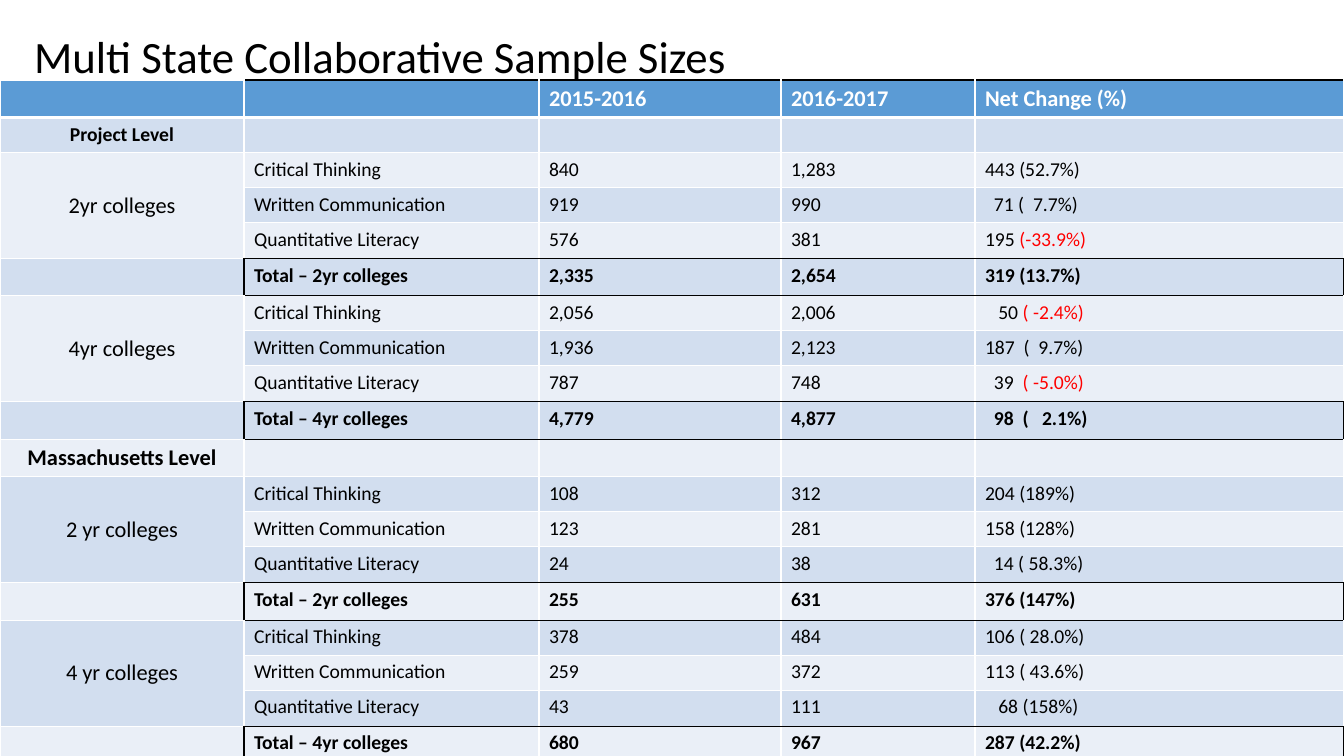
from typing import NamedTuple

from lxml.etree import SubElement
from pptx import Presentation
from pptx.dml.color import RGBColor
from pptx.enum.text import MSO_ANCHOR, PP_ALIGN
from pptx.oxml.ns import qn
from pptx.util import Emu, Pt

FONT = "Calibri"
WHITE, BLACK, RED = "FFFFFF", "000000", "FF0000"
HEAD, BANDS = "5B9BD5", ("EAEFF7", "D2DEEF")
COLS = (244, 295, 242, 194, 369)
LOW, TALL = 35, 37


class Row(NamedTuple):
    group: str = ""
    label: str = ""
    first: str = ""
    second: str = ""
    change: str = ""
    high: int = LOW
    size: int = 14  # text size of the group column
    bold: bool = False
    span: int = 1

    @property
    def total(self) -> bool:
        return self.label.startswith("Total")


def block(group: str, name: str, *scores: tuple[str, str, str]) -> list[Row]:
    """Three outcomes under one group name, then their total."""
    crit, writ, quant, total = scores
    return [
        Row(group, "Critical Thinking", *crit, size=16, span=3),
        Row("", "Written Communication", *writ),
        Row("", "Quantitative Literacy", *quant, high=LOW + 1),
        Row("", f"Total – {name}", *total, high=TALL, size=16, bold=True),
    ]


ROWS = [
    Row("", "", "2015-2016", "2016-2017", "Net Change (%)", TALL, 16, True),
    Row("Project Level", bold=True),
    *block("2yr colleges", "2yr colleges",
           ("840", "1,283", "443 (52.7%)"),
           ("919", "990", "  71 (  7.7%)"),
           ("576", "381", "195 (-33.9%)"),
           ("2,335", "2,654", "319 (13.7%)")),
    *block("4yr colleges", "4yr colleges",
           ("2,056", "2,006", "   50 ( -2.4%)"),
           ("1,936", "2,123", "187  (  9.7%)"),
           ("787", "748", "  39  ( -5.0%)"),
           ("4,779", "4,877", "  98  (   2.1%)")),
    Row("Massachusetts Level", high=TALL, size=16, bold=True),
    *block("2 yr colleges", "2yr colleges",
           ("108", "312", "204 (189%)"),
           ("123", "281", "158 (128%)"),
           ("24", "38", "  14 ( 58.3%)"),
           ("255", "631", "376 (147%)")),
    *block("4 yr colleges", "4yr colleges",
           ("378", "484", "106 ( 28.0%)"),
           ("259", "372", "113 ( 43.6%)"),
           ("43", "111", "   68 (158%)"),
           ("680", "967", "287 (42.2%)")),
]


def px(num: int) -> Emu:
    return Emu(round(num * 914400 / 100.8))


def paint(hue: str) -> RGBColor:
    return RGBColor.from_string(hue)


def put(para, text: str, *, size: int, hue: str = BLACK, bold: bool = False,
        align=PP_ALIGN.LEFT) -> None:
    """Add a run; with no text, only set the height of the blank line."""
    para.alignment = align
    if not text:
        SubElement(para._p, qn("a:endParaRPr"), sz=str(size * 100))
        return
    run = para.add_run()
    run.text = text
    run.font.name, run.font.size, run.font.bold = FONT, Pt(size), bold
    run.font.color.rgb = paint(hue)


def edge(cell, side: str, hue: str, wide: int) -> None:
    line = SubElement(cell._tc.get_or_add_tcPr(), qn(f"a:ln{side}"), w=str(Pt(wide)))
    fill = SubElement(line, qn("a:solidFill"))
    SubElement(fill, qn("a:srgbClr"), val=hue)


def frame(cell, row: int, col: int) -> None:
    """White grid, with a black box around each total."""
    def total(at: int) -> bool:
        return at < len(ROWS) and ROWS[at].total

    here, last = total(row), len(COLS) - 1
    dark = {
        "L": here and col == 1,
        "R": here and col in (0, last),
        "T": col > 0 and (here or total(row - 1)),
        "B": col > 0 and (here or total(row + 1)),
    }
    for side, black in dark.items():
        wide = 3 if row == 0 and side == "B" else 1
        edge(cell, side, BLACK if black else WHITE, wide)


def fill(cell, row: int, col: int) -> None:
    item = ROWS[row]
    frame(cell, row, col)
    cell.fill.solid()
    cell.fill.fore_color.rgb = paint(BANDS[row % 2] if row else HEAD)
    para = cell.text_frame.paragraphs[0]
    text = item[col]
    size = item.size if col == 0 or not item.label else 14
    look = dict(size=size, bold=item.bold, hue=BLACK if row else WHITE)
    if col == 0:
        look["align"] = PP_ALIGN.CENTER
        if text and text != "Massachusetts Level":
            cell.vertical_anchor = MSO_ANCHOR.MIDDLE
    if "(-" in text.replace(" ", ""):
        cut = text.index("(")
        put(para, text[:cut], **look)
        put(para, text[cut:], **look | {"hue": RED})
    else:
        put(para, text, **look)


def main() -> None:
    deck = Presentation()
    deck.slide_width, deck.slide_height = px(1344), px(756)
    slide = deck.slides.add_slide(deck.slide_layouts[5])

    # Title
    title = slide.shapes.title
    title.left, title.top, title.width, title.height = map(px, (24, 8, 1227, 101))
    title.text_frame.vertical_anchor = MSO_ANCHOR.MIDDLE
    para = title.text_frame.paragraphs[0]
    para.line_spacing = 0.9
    put(para, "Multi State Collaborative Sample Sizes", size=32)

    # Table of sample sizes
    high = sum(item.high for item in ROWS)
    grid = slide.shapes.add_table(len(ROWS), len(COLS), px(0), px(80),
                                  px(sum(COLS)), px(high)).table
    grid.first_row = grid.horz_banding = False
    for col, wide in enumerate(COLS):
        grid.columns[col].width = px(wide)
    for row, item in enumerate(ROWS):
        grid.rows[row].height = px(item.high)
        for col in range(len(COLS)):
            fill(grid.cell(row, col), row, col)
        if item.span > 1:
            grid.cell(row, 0).merge(grid.cell(row + item.span - 1, 0))

    deck.save("out.pptx")


if __name__ == "__main__":
    main()
